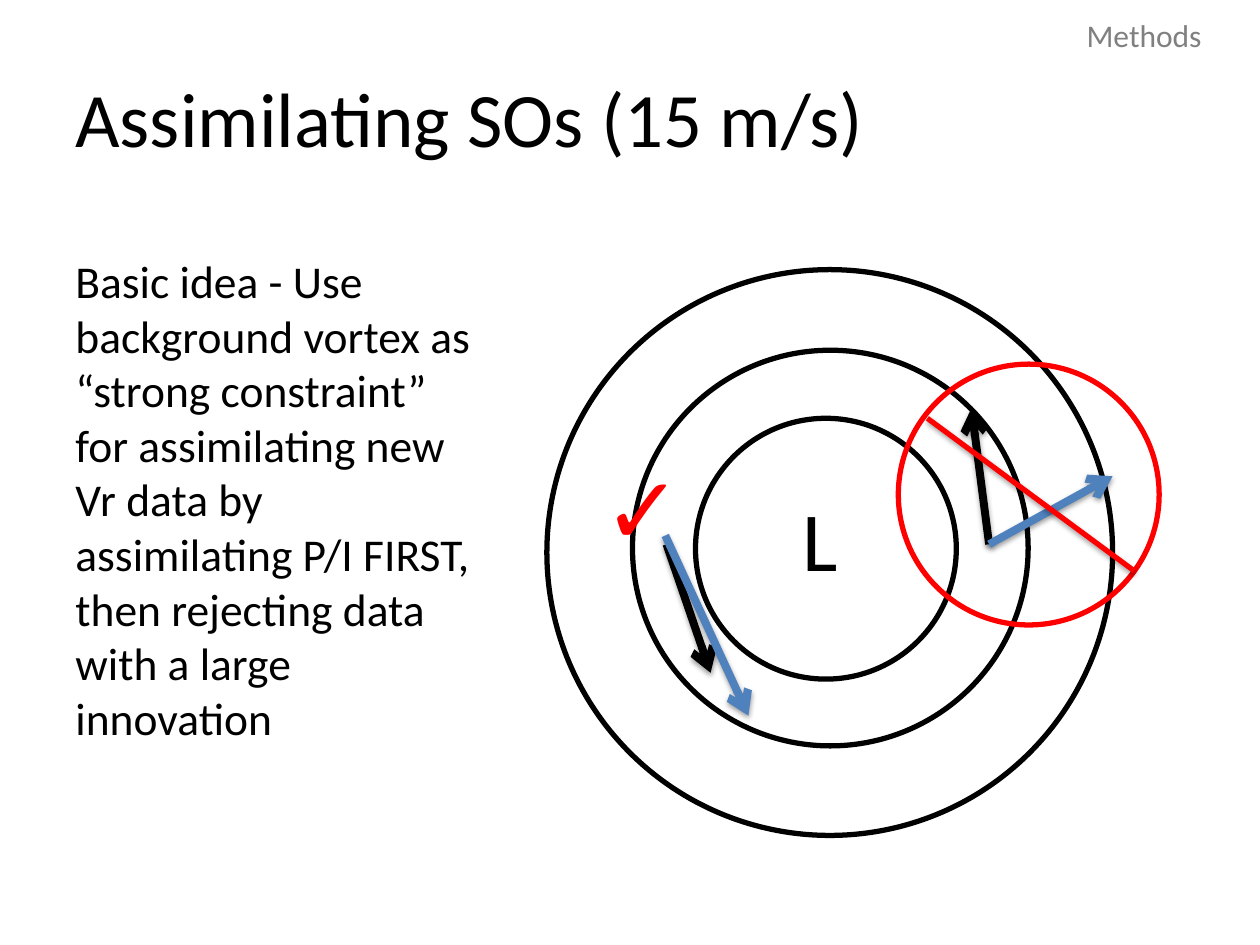
from lxml.etree import SubElement
from pptx import Presentation
from pptx.dml.color import RGBColor
from pptx.enum.shapes import MSO_CONNECTOR, MSO_SHAPE
from pptx.enum.text import MSO_ANCHOR, PP_ALIGN
from pptx.oxml.ns import qn
from pptx.util import Pt

PX = 9144
BLACK = RGBColor(0x00, 0x00, 0x00)
GRAY = RGBColor(0x80, 0x80, 0x80)
BLUE = RGBColor(0x4F, 0x81, 0xBD)
RED = RGBColor(0xFF, 0x00, 0x00)


def text(slide, box, words, size, color=BLACK, font="Calibri",
         align=PP_ALIGN.LEFT, anchor=MSO_ANCHOR.TOP):
    frame = slide.shapes.add_textbox(*(n * PX for n in box)).text_frame
    frame.word_wrap = True
    frame.vertical_anchor = anchor
    para = frame.paragraphs[0]
    para.alignment = align
    run = para.add_run()
    run.text = words
    run.font.size = Pt(size)
    run.font.name = font
    run.font.color.rgb = color
    return frame


def ring(slide, left, top, size, color=BLACK):
    oval = slide.shapes.add_shape(
        MSO_SHAPE.OVAL, left * PX, top * PX, size * PX, size * PX)
    oval.shadow.inherit = False
    oval.fill.background()
    oval.line.color.rgb = color
    oval.line.width = Pt(3)


def shade(line):
    effects = SubElement(line._element.spPr, qn("a:effectLst"))
    outer = SubElement(effects, qn("a:outerShdw"), blurRad="40000",
                       dist="20000", dir="5400000", rotWithShape="0")
    tint = SubElement(outer, qn("a:srgbClr"), val=str(BLACK))
    SubElement(tint, qn("a:alpha"), val="38000")


def stroke(slide, start, end, color, width=4.5, arrow=True):
    line = slide.shapes.add_connector(
        MSO_CONNECTOR.STRAIGHT, *(n * PX for n in start + end))
    line.line.color.rgb = color
    line.line.width = Pt(width)
    if arrow:
        SubElement(line.line._get_or_add_ln(), qn("a:tailEnd"), type="arrow")
    shade(line)


def header(slide, left, top, width, height):
    text(slide, (left, top, width, height), "Assimilating SOs (15 m/s)", 44,
         anchor=MSO_ANCHOR.MIDDLE)
    text(slide, (left + 777, top - 22, 162, 42), "Methods", 18, GRAY,
         align=PP_ALIGN.CENTER)


def idea(slide, *box):
    frame = text(
        slide, box,
        "Basic idea - Use background vortex as “strong constraint” for "
        "assimilating new Vr data by assimilating P/I FIRST, then rejecting "
        "data with a large innovation", 26)
    frame.margin_right = 19 * PX


def vortex(slide, left, top, size):
    ring(slide, left, top, size)
    ring(slide, left + 68, top + 64, 314)
    ring(slide, left + 118, top + 118, 207)
    text(slide, (left + 193, top + 168, 109, 91), "L", 48)


def reject(slide, left, top, size):
    root = (left + 72, top + 143)
    stroke(slide, root, (left + 58, top + 35), BLACK)
    stroke(slide, root, (left + 170, top + 89), BLUE)
    ring(slide, left, top, size, RED)
    stroke(slide, (left + 23, top + 43), (left + 187, top + 164), RED, 3, False)


def accept(slide, left, top):
    stroke(slide, (left + 60, top + 80), (left + 95, top + 182), BLACK)
    stroke(slide, (left + 59, top + 73), (left + 125, top + 216), BLUE)
    text(slide, (left, top, 83, 101), "✓", 54, RED, "Arial")


def main():
    deck = Presentation()
    deck.slide_width, deck.slide_height = 1000 * PX, 750 * PX
    slide = deck.slides.add_slide(deck.slide_layouts[6])
    header(slide, 50, 30, 900, 125)
    vortex(slide, 434, 214, 449)
    reject(slide, 713, 289, 207)
    idea(slide, 50, 196, 349, 495)
    accept(slide, 469, 352)
    deck.save("out.pptx")


if __name__ == "__main__":
    main()
